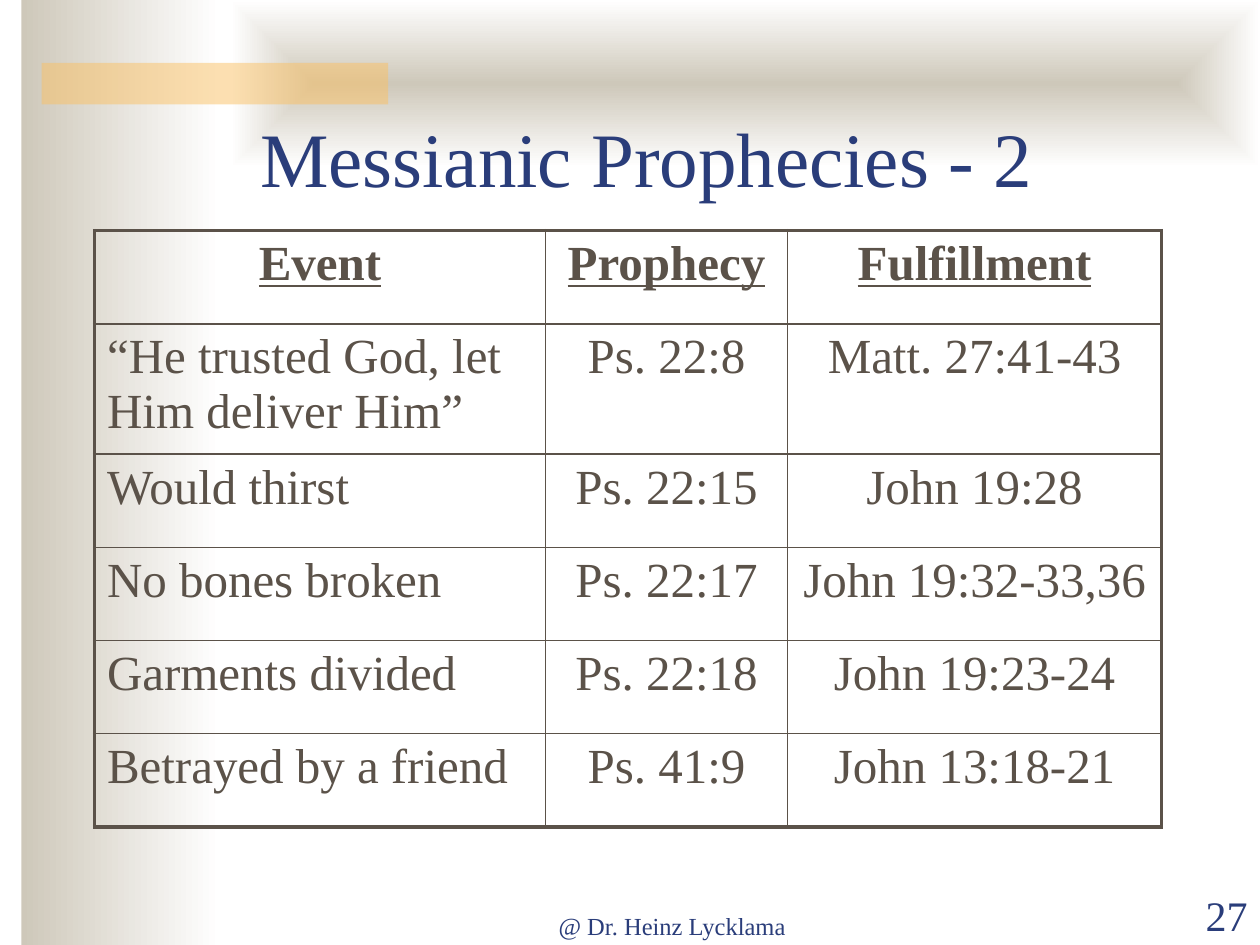
from dataclasses import dataclass

from lxml import etree
from pptx import Presentation
from pptx.dml.color import RGBColor
from pptx.enum.shapes import MSO_SHAPE
from pptx.enum.text import MSO_ANCHOR, PP_ALIGN
from pptx.oxml.ns import qn
from pptx.util import Inches, Pt

RECTANGLE = MSO_SHAPE.RECTANGLE
BOTTOM = MSO_ANCHOR.BOTTOM
LEFT, CENTER, RIGHT = PP_ALIGN.LEFT, PP_ALIGN.CENTER, PP_ALIGN.RIGHT


@dataclass(frozen=True)
class Theme:
    font: str = "Times New Roman"
    navy: str = "2A3D7A"
    brown: str = "5B5249"
    sand: str = "CEC8BA"
    white: str = "FFFFFF"
    amber: str = "FAC164"
    title_size: int = 44
    table_size: int = 28
    number_size: int = 24
    footer_size: int = 14
    outer_line: float = 2.25
    inner_line: float = 1


THEME = Theme()

COLUMN_WIDTHS = (3.58, 1.92, 2.97)
ROW_HEIGHTS = (0.74, 1.03, 0.74, 0.74, 0.74, 0.74)
PROPHECIES = (
    ("Event", "Prophecy", "Fulfillment"),
    ("“He trusted God, let Him deliver Him”", "Ps. 22:8", "Matt. 27:41-43"),
    ("Would thirst", "Ps. 22:15", "John 19:28"),
    ("No bones broken", "Ps. 22:17", "John 19:32-33,36"),
    ("Garments divided", "Ps. 22:18", "John 19:23-24"),
    ("Betrayed by a friend", "Ps. 41:9", "John 13:18-21"),
)


def set_font(para, size, color):
    para.font.name = THEME.font
    para.font.size = Pt(size)
    para.font.color.rgb = RGBColor.from_string(color)


def add_rectangle(page, left, top, width, height):
    box = page.shapes.add_shape(
        RECTANGLE, Inches(left), Inches(top), Inches(width), Inches(height))
    box.shadow.inherit = False
    box.line.fill.background()
    return box


def fill_gradient(box, from_center=False):
    """Fade from sand to white, left to right or from the center outwards."""
    box.fill.gradient()
    box.fill.gradient_angle = 0
    for stop, color, position in zip(
            box.fill.gradient_stops, (THEME.sand, THEME.white), (0, 1)):
        stop.color.rgb = RGBColor.from_string(color)
        stop.position = position
    if from_center:
        linear = box.element.spPr.find(qn("a:gradFill")).find(qn("a:lin"))
        shape_fade = etree.Element(qn("a:path"), {"path": "shape"})
        etree.SubElement(shape_fade, qn("a:fillToRect"),
                         {side: "50000" for side in "ltrb"})
        linear.getparent().replace(linear, shape_fade)


def fill_translucent(box, color, percent):
    box.fill.solid()
    box.fill.fore_color.rgb = RGBColor.from_string(color)
    tone = box.element.spPr.find(qn("a:solidFill")).find(qn("a:srgbClr"))
    etree.SubElement(tone, qn("a:alpha"), val=str(percent * 1000))


def add_text(page, text, left, top, width, height, size, align):
    box = page.shapes.add_textbox(
        Inches(left), Inches(top), Inches(width), Inches(height))
    frame = box.text_frame
    frame.word_wrap = True
    frame.vertical_anchor = BOTTOM
    para = frame.paragraphs[0]
    para.text = text
    para.alignment = align
    set_font(para, size, THEME.navy)


def set_borders(cell, outer_sides):
    """Draw all four sides, heavier where the cell meets the table edge."""
    properties = cell._tc.get_or_add_tcPr()
    for index, side in enumerate("LRTB"):
        weight = THEME.outer_line if side in outer_sides else THEME.inner_line
        line = etree.Element(qn(f"a:ln{side}"), w=str(Pt(weight)))
        solid = etree.SubElement(line, qn("a:solidFill"))
        etree.SubElement(solid, qn("a:srgbClr"), val=THEME.brown)
        properties.insert(index, line)


def add_prophecy_table(page, left, top):
    table = page.shapes.add_table(
        len(ROW_HEIGHTS), len(COLUMN_WIDTHS), Inches(left), Inches(top),
        Inches(sum(COLUMN_WIDTHS)), Inches(sum(ROW_HEIGHTS))).table
    table.first_row = False
    table.horz_banding = False
    for column, width in zip(table.columns, COLUMN_WIDTHS):
        column.width = Inches(width)
    for row, height in zip(table.rows, ROW_HEIGHTS):
        row.height = Inches(height)

    last_row, last_column = len(ROW_HEIGHTS) - 1, len(COLUMN_WIDTHS) - 1
    for r, entries in enumerate(PROPHECIES):
        for c, text in enumerate(entries):
            cell = table.cell(r, c)
            cell.fill.background()
            edges = {"L": c == 0, "R": c == last_column,
                     "T": r == 0, "B": r == last_row}
            set_borders(cell, [side for side in edges if edges[side]])
            para = cell.text_frame.paragraphs[0]
            para.text = text
            para.alignment = LEFT if c == 0 and r > 0 else CENTER
            set_font(para, THEME.table_size, THEME.brown)
            para.font.bold = para.font.underline = r == 0


def main():
    deck = Presentation()
    deck.slide_width, deck.slide_height = Inches(10), Inches(7.5)
    page = deck.slides.add_slide(deck.slide_layouts[6])

    # Background bands
    fill_gradient(add_rectangle(page, 0.17, 0, 1.58, 7.5))
    fill_gradient(add_rectangle(page, 1.83, 0, 8.17, 1.33), from_center=True)
    fill_translucent(add_rectangle(page, 0.33, 0.5, 2.75, 0.33), THEME.amber, 50)

    # Footer and page number
    add_text(page, "@ Dr. Heinz Lycklama", 3.75, 7.01, 3.17, 0.5,
             THEME.footer_size, CENTER)
    add_text(page, "27", 9, 7.01, 1, 0.5, THEME.number_size, RIGHT)

    # Title and table
    add_text(page, "Messianic Prophecies - 2", 1.67, 0.83, 6.92, 0.83,
             THEME.title_size, CENTER)
    add_prophecy_table(page, 0.75, 1.83)

    deck.save("out.pptx")


if __name__ == "__main__":
    main()
